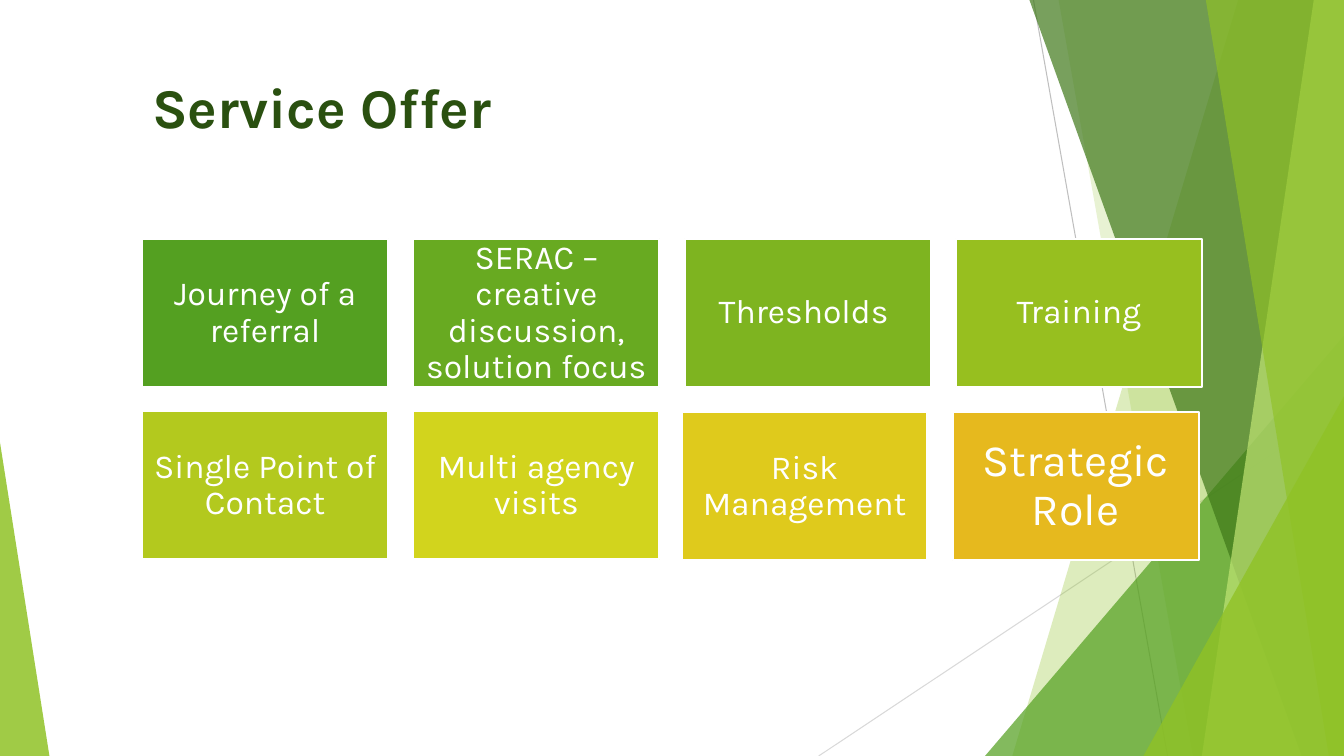
from dataclasses import dataclass

from lxml.etree import SubElement
from pptx import Presentation
from pptx.dml.color import RGBColor
from pptx.enum.shapes import MSO_CONNECTOR as Connector, MSO_SHAPE as Shape
from pptx.enum.text import MSO_ANCHOR as Anchor, MSO_AUTO_SIZE as AutoSize, PP_ALIGN as Align
from pptx.oxml.ns import qn
from pptx.util import Inches, Pt


@dataclass(frozen=True)
class Theme:
    font: str = "Karla"
    title_size: int = 40
    card_size: int = 24
    large_size: int = 32
    title: str = "2A5010"
    white: str = "FFFFFF"
    lime: str = "90C226"
    green: str = "54A021"
    forest: str = "3F7819"
    pale: str = "C0E474"
    grey: str = "BFBFBF"
    light_grey: str = "D9D9D9"
    cards: tuple = ("54A021", "68AA21", "7EB420", "97BF1F",
                    "B3C91E", "D2D41D", "DFCA1C", "E6B91E")


def write_text(frame, text, *, font, size, color, bold=False, align=Align.LEFT,
               anchor=Anchor.TOP, margins=(0.1, 0.05), spacing=1.0):
    frame.word_wrap = True
    frame.auto_size = AutoSize.NONE
    frame.vertical_anchor = anchor
    frame.margin_left = frame.margin_right = Inches(margins[0])
    frame.margin_top = frame.margin_bottom = Inches(margins[1])
    paragraph = frame.paragraphs[0]
    paragraph.alignment = align
    paragraph.line_spacing = spacing
    run = paragraph.add_run()
    run.text = text
    run.font.name = font
    run.font.size = Pt(size)
    run.font.bold = bold
    run.font.color.rgb = RGBColor.from_string(color)


class SlideBuilder:
    def __init__(self, slide, theme):
        self.slide = slide
        self.shapes = slide.shapes
        self.theme = theme

    def fill(self, shape, color, opacity=100):
        shape.shadow.inherit = False
        shape.fill.solid()
        shape.fill.fore_color.rgb = RGBColor.from_string(color)
        shape.line.fill.background()
        if opacity < 100:
            color_element = shape.fill._xPr.find(qn("a:solidFill"))[0]
            SubElement(color_element, qn("a:alpha")).set("val", str(opacity * 1000))

    def title(self, text, left, top, width, height):
        title = self.shapes.title
        title.left, title.top = Inches(left), Inches(top)
        title.width, title.height = Inches(width), Inches(height)
        write_text(title.text_frame, text, font=self.theme.font, bold=True,
                   size=self.theme.title_size, color=self.theme.title)

    def line(self, start, end, color):
        points = [Inches(value) for value in (*start, *end)]
        line = self.shapes.add_connector(Connector.STRAIGHT, *points)
        line.line.color.rgb = RGBColor.from_string(color)
        line.line.width = Pt(0.75)
        SubElement(line._element.spPr, qn("a:effectLst"))

    def band(self, top_left, bottom_left, color, opacity):
        right, bottom = 13.33, 7.5
        corners = [(top_left, 0), (right, 0), (right, bottom), (bottom_left, bottom)]
        points = [(Inches(x), Inches(y)) for x, y in corners]
        builder = self.shapes.build_freeform(*points[0])
        builder.add_line_segments(points[1:], close=True)
        self.fill(builder.convert_to_shape(), color, opacity)

    def triangle(self, left, top, width, color, opacity, apex):
        box = [Inches(value) for value in (left, top, width, 7.5 - top)]
        triangle = self.shapes.add_shape(Shape.ISOSCELES_TRIANGLE, *box)
        triangle.adjustments[0] = apex
        self.fill(triangle, color, opacity)

    def card(self, text, left, top, color, size, margin):
        box = [Inches(value) for value in (left, top, 2.44, 1.47)]
        card = self.shapes.add_shape(Shape.RECTANGLE, *box)
        self.fill(card, color)
        card.line.color.rgb = RGBColor.from_string(self.theme.white)
        card.line.width = Pt(1.5)
        write_text(card.text_frame, text, font=self.theme.font, size=size,
                   color=self.theme.white, align=Align.CENTER, anchor=Anchor.MIDDLE,
                   margins=(margin, margin), spacing=0.9)


def draw_backdrop(builder):
    theme = builder.theme
    builder.line((10.25, 0), (11.58, 7.5), theme.grey)
    builder.line((13.33, 4.03), (8.12, 7.5), theme.light_grey)
    builder.band(12.28, 10.04, theme.lime, 30)
    builder.band(10.5, 11.83, theme.lime, 20)
    builder.triangle(9.77, 3.33, 3.56, theme.green, 72, apex=1)
    builder.band(10.21, 12.91, theme.forest, 70)
    builder.band(13.03, 11.92, theme.pale, 70)
    builder.band(11.96, 13.18, theme.lime, 65)
    builder.triangle(11.34, 3.93, 1.99, theme.lime, 80, apex=1)
    builder.triangle(0, 4.39, 0.49, theme.lime, 85, apex=0)


def draw_cards(builder):
    theme = builder.theme
    services = ["Journey of a referral", "SERAC – creative discussion, solution focus",
                "Thresholds ", "Training", "Single Point of Contact",
                "Multi agency visits", "Risk Management", "Strategic Role"]
    nudges = {"Risk Management": (-0.03, 0.01), "Strategic Role": (-0.03, 0.01)}
    large = {"Strategic Role"}
    for index, (service, color) in enumerate(zip(services, theme.cards)):
        row, column = divmod(index, 4)
        shift_x, shift_y = nudges.get(service, (0, 0))
        size, margin = (theme.large_size, 0.13) if service in large else (theme.card_size, 0.1)
        builder.card(service, 1.41 + 2.69 * column + shift_x,
                     2.37 + 1.71 * row + shift_y, color, size, margin)


def main():
    presentation = Presentation()
    presentation.slide_width = Inches(13.33)
    presentation.slide_height = Inches(7.5)
    slide = presentation.slides.add_slide(presentation.slide_layouts[5])
    builder = SlideBuilder(slide, Theme())
    draw_backdrop(builder)
    builder.title("Service Offer", 1.41, 0.67, 11.15, 1.2)
    draw_cards(builder)
    presentation.save("out.pptx")


if __name__ == "__main__":
    main()
